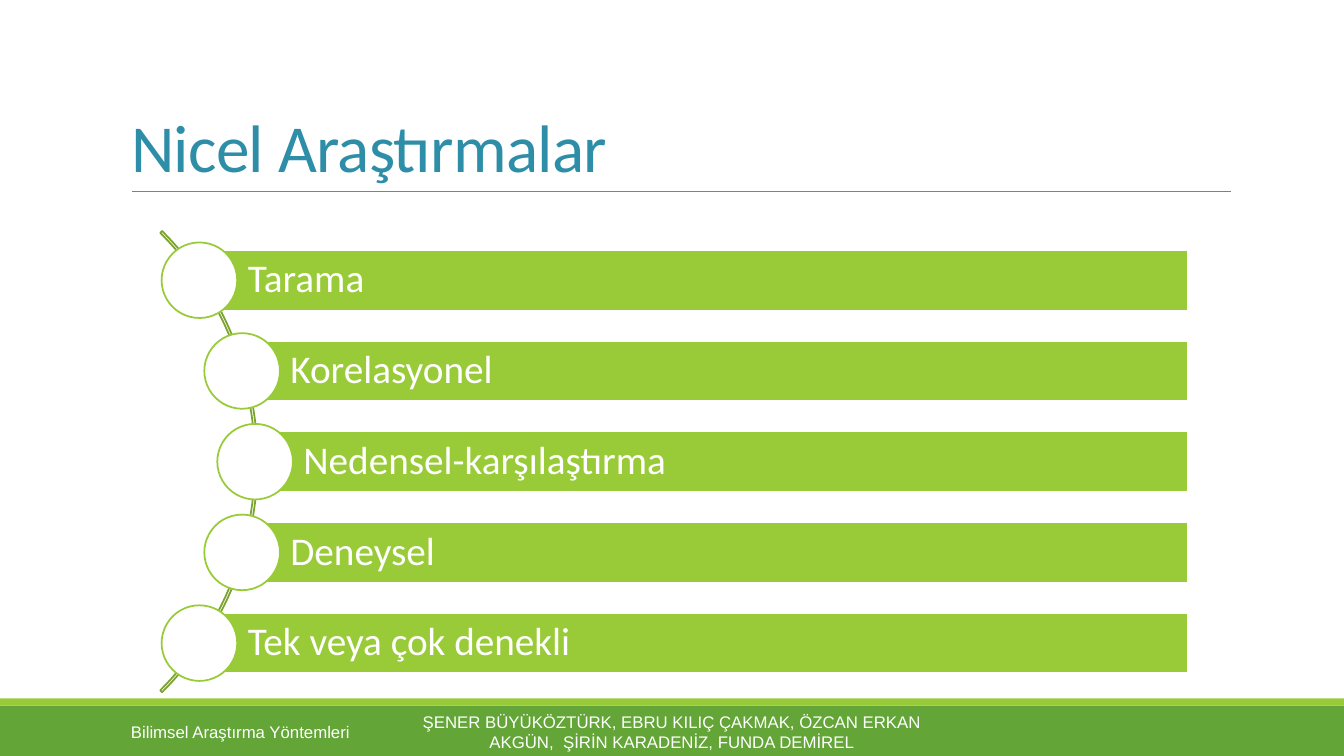
"""Build the slide on quantitative research types."""
from dataclasses import dataclass
from math import sqrt

from lxml.etree import SubElement
from pptx import Presentation
from pptx.dml.color import RGBColor
from pptx.enum.shapes import MSO_CONNECTOR as CONN, MSO_SHAPE as SHAPE
from pptx.enum.text import MSO_ANCHOR as ANCHOR, PP_ALIGN as ALIGN
from pptx.oxml.ns import qn
from pptx.util import Inches, Pt

WHITE = RGBColor(0xFF, 0xFF, 0xFF)
OFF_WHITE = RGBColor(0xFE, 0xFE, 0xFE)
GREEN = RGBColor(0x63, 0xA5, 0x37)
LIME = RGBColor(0x99, 0xCB, 0x38)
OLIVE = RGBColor(0x7B, 0xA3, 0x2D)
TEAL = RGBColor(0x2E, 0x8E, 0xA8)
GRAY = RGBColor(0x80, 0x80, 0x80)

ARC_X, ARC_Y, ARC_SIZE = -0.68, 4.58, 6.47
ORBIT = 3.21
PITCH, BAR_H, BAR_RIGHT, DOT = 0.9, 0.6, 11.78, 0.75
TYPES = ["Tarama", "Korelasyonel", "Nedensel-karşılaştırma", "Deneysel",
         "Tek veya çok denekli"]


@dataclass
class Box:
    left: float
    top: float
    width: float
    height: float

    def emu(self) -> tuple:
        return tuple(Inches(v) for v in (self.left, self.top, self.width, self.height))


@dataclass
class Footer:
    text: str
    box: Box
    color: RGBColor
    align: ALIGN


FOOTERS = [
    Footer("Bilimsel Araştırma Yöntemleri", Box(1.2, 7.06, 2.7, 0.4),
           OFF_WHITE, ALIGN.LEFT),
    Footer("ŞENER BÜYÜKÖZTÜRK, EBRU KILIÇ ÇAKMAK, ÖZCAN ERKAN AKGÜN,  "
           "ŞİRİN KARADENİZ, FUNDA DEMİREL", Box(4.03, 7.06, 5.27, 0.4),
           WHITE, ALIGN.CENTER),
]


def add_shape(slide, kind: SHAPE, box: Box, fill: RGBColor | None = None,
              line: RGBColor | None = None):
    sp = slide.shapes.add_shape(kind, *box.emu())
    sp.shadow.inherit = False
    if fill is None:
        sp.fill.background()
    else:
        sp.fill.solid()
        sp.fill.fore_color.rgb = fill
    if line is None:
        sp.line.fill.background()
    else:
        sp.line.color.rgb = line
        sp.line.width = Pt(1.25)
    return sp


def set_text(sp, text: str, size: float, font: str, color: RGBColor,
             align: ALIGN = ALIGN.LEFT, anchor: ANCHOR = ANCHOR.MIDDLE,
             spacing: float = 1.0):
    tf = sp.text_frame
    tf.text = text
    tf.word_wrap = True
    tf.vertical_anchor = anchor
    p = tf.paragraphs[0]
    p.alignment = align
    p.line_spacing = spacing
    r = p.runs[0]
    r.font.size = Pt(size)
    r.font.name = font
    r.font.color.rgb = color
    return r


def add_title(slide) -> None:
    title = slide.shapes.title
    title.left, title.top, title.width, title.height = Box(1.2, 0.31, 11, 1.59).emu()
    r = set_text(title, "Nicel Araştırmalar", 48, "Calibri", TEAL,
                 anchor=ANCHOR.BOTTOM, spacing=0.85)
    r.font._element.set("spc", "-50")
    rule = slide.shapes.add_connector(CONN.STRAIGHT, Inches(1.31), Inches(1.9),
                                      Inches(12.21), Inches(1.9))
    rule.line.color.rgb = GRAY
    rule.line.width = Pt(0.5)
    SubElement(rule._element.spPr, qn("a:effectLst"))


def add_arc(slide) -> None:
    box = Box(ARC_X - ARC_SIZE / 2, ARC_Y - ARC_SIZE / 2, ARC_SIZE, ARC_SIZE)
    arc = add_shape(slide, SHAPE.BLOCK_ARC, box, line=OLIVE)
    for i, value in enumerate((189, 27, 0.004)):
        arc.adjustments[i] = value


def add_type(slide, index: int, text: str) -> None:
    dy = (index - (len(TYPES) - 1) / 2) * PITCH
    x, y = ARC_X + sqrt(ORBIT ** 2 - dy ** 2), ARC_Y + dy
    bar = add_shape(slide, SHAPE.RECTANGLE,
                    Box(x, y - BAR_H / 2, BAR_RIGHT - x, BAR_H), LIME, WHITE)
    set_text(bar, text, 28, "Calibri", WHITE, spacing=0.9)
    tf = bar.text_frame
    tf.margin_left = Inches(0.48)
    tf.margin_top = tf.margin_right = tf.margin_bottom = Inches(0.08)
    add_shape(slide, SHAPE.OVAL, Box(x - DOT / 2, y - DOT / 2, DOT, DOT), WHITE, LIME)


def main() -> None:
    prs = Presentation()
    prs.slide_width, prs.slide_height = Inches(13.33), Inches(7.5)
    slide = prs.slides.add_slide(prs.slide_layouts[5])
    add_shape(slide, SHAPE.RECTANGLE, Box(0, 7, 13.33, 0.5), GREEN)
    add_shape(slide, SHAPE.RECTANGLE, Box(0, 6.93, 13.33, 0.07), LIME)
    add_title(slide)
    add_arc(slide)
    for i, text in enumerate(TYPES):
        add_type(slide, i, text)
    for footer in FOOTERS:
        sp = slide.shapes.add_textbox(*footer.box.emu())
        set_text(sp, footer.text, 12, "Arial", footer.color, footer.align)
    prs.save("out.pptx")


if __name__ == "__main__":
    main()
